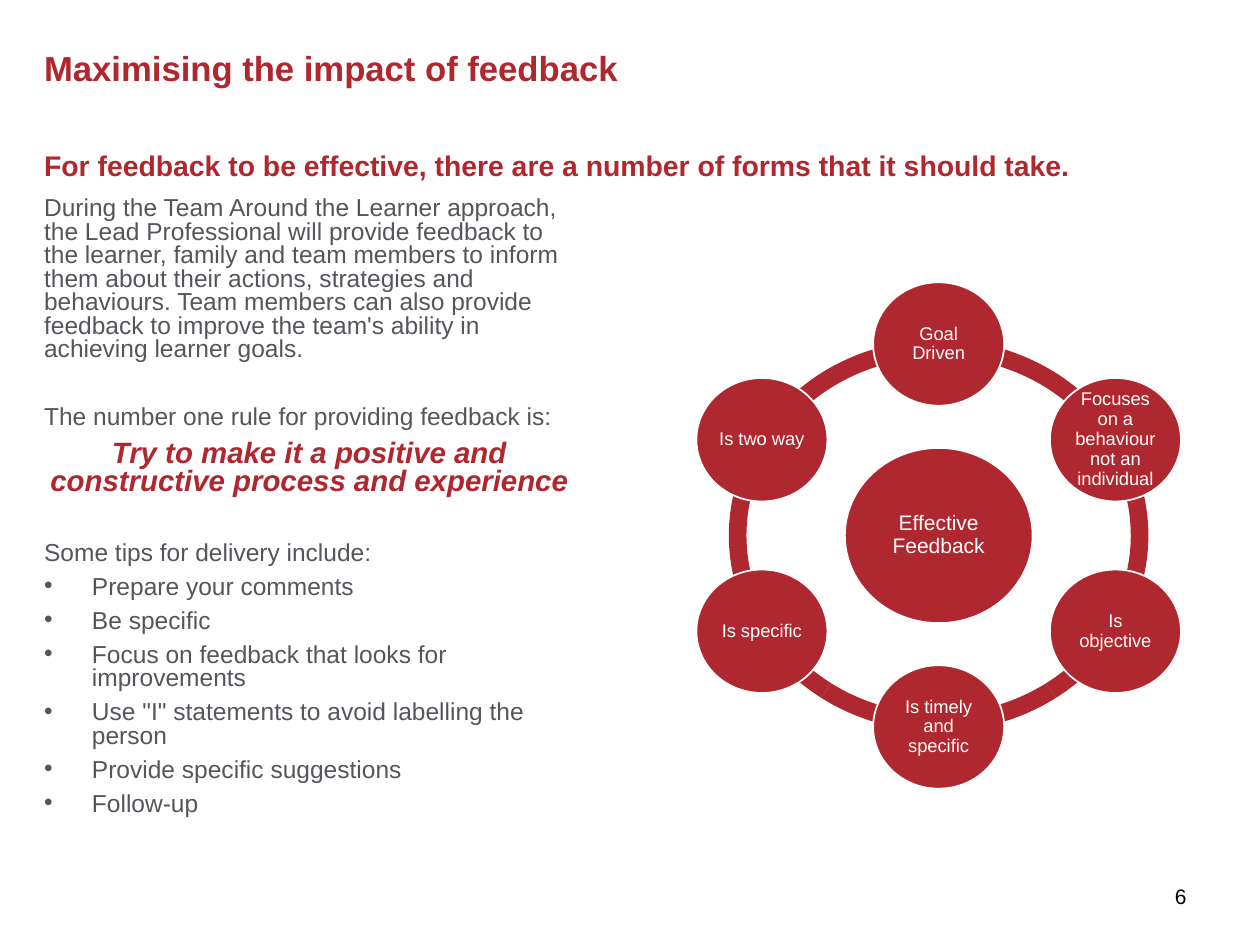
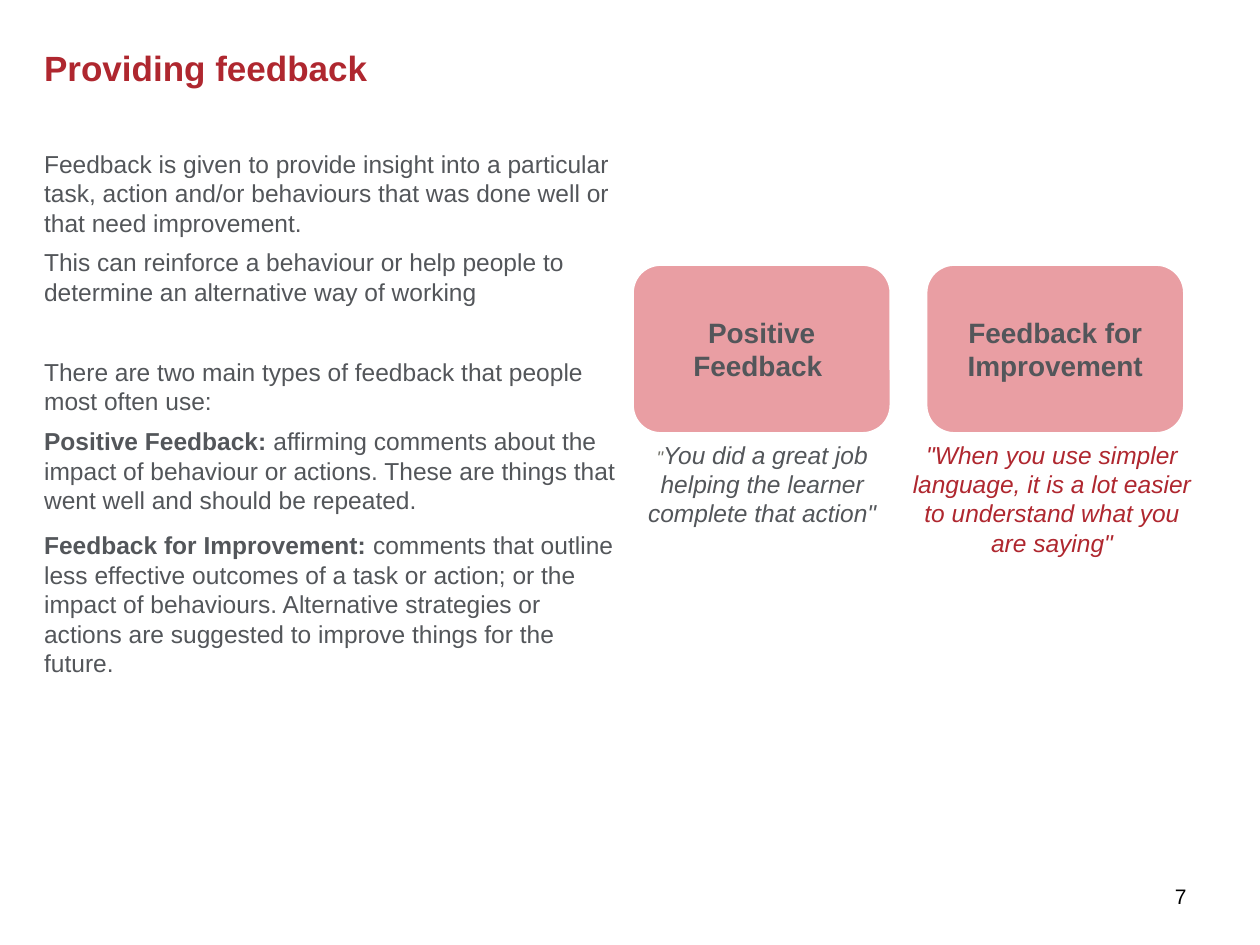
import math
from lxml import etree
from pptx import Presentation
from pptx import util as u
from pptx.dml.color import RGBColor
from pptx.enum import shapes, text
from pptx.oxml import ns

HUE = {"red": "AF272F", "pink": "E99EA3", "grey": "53565A",
       "ash": "707068", "white": "FFFFFF", "black": "000000"}
FONT = "Arial"
LEFT, MID = text.PP_ALIGN.LEFT, text.PP_ALIGN.CENTER
TOP, HALF = text.MSO_ANCHOR.TOP, text.MSO_ANCHOR.MIDDLE
KIND = shapes.MSO_SHAPE


def frame(shape, inset=None, anchor=TOP):
    """Return the wrapped, fixed-size text frame of a shape."""
    tf = shape.text_frame
    tf.word_wrap = True
    tf.auto_size = text.MSO_AUTO_SIZE.NONE
    tf.vertical_anchor = anchor
    if inset is not None:
        tf.margin_left = tf.margin_right = u.Inches(inset)
        tf.margin_top = tf.margin_bottom = u.Inches(inset)
    return tf


def say(tf, words, size=14, hue="grey", bold=False, slant=False,
        align=LEFT, line=1.0, before=0, after=0, bullet=False):
    """Add a paragraph; words is a string or a list of (string, run format)."""
    para = tf.paragraphs[0]
    if para.runs:
        para = tf.add_paragraph()
    props = para._p.get_or_add_pPr()
    hang = u.Inches(0.38) if bullet else 0
    props.set("marL", str(hang))
    props.set("indent", str(-hang))
    mark = etree.SubElement(props, ns.qn("a:buChar" if bullet else "a:buNone"))
    if bullet:
        mark.set("char", "•")
    para.alignment, para.line_spacing = align, line
    para.space_before, para.space_after = u.Pt(before), u.Pt(after)
    for part, own in [(words, {})] if isinstance(words, str) else words:
        run = para.add_run()
        run.text = part
        font = run.font
        font.name = FONT
        font.size = u.Pt(own.get("size", size))
        font.bold, font.italic = own.get("bold", bold), slant
        font.color.rgb = RGBColor.from_string(HUE[own.get("hue", hue)])


prs = Presentation()
prs.slide_width, prs.slide_height = u.Inches(10), u.Inches(7.5)

# Shared parts: title, body and page number
pages = [
    ("Maximising the impact of feedback", 19.8, 6, (0.35, 1.57, 4.21, 5.08)),
    ("Providing feedback", 20, 7, (0.35, 1.18, 4.59, 4.52)),
]
made = []
for name, size, num, box in pages:
    page = prs.slides.add_slide(prs.slide_layouts[1])
    spots = [(page.shapes.title, (0.35, 0.41, 9.25, 0.86)),
             (page.placeholders[1], box)]
    for spot, area in spots:
        spot.left, spot.top, spot.width, spot.height = map(u.Inches, area)
    head, body = [frame(spot, 0) for spot, area in spots]
    say(head, name, size=size, hue="red", bold=True, line=0.9)
    foot = page.shapes.add_textbox(*map(u.Inches, (9.13, 6.91, 0.48, 0.4)))
    say(frame(foot, anchor=HALF), str(num), size=12, hue="black", align=MID)
    made.append((page.shapes, head, body))

# Slide 1: subtitle and advice
art, head, body = made[0]
say(head, "For feedback to be effective, there are a number of forms that it should take.",
    size=16.2, hue="red", bold=True, line=0.9, before=36)
tight = dict(line=0.8, after=3)
say(body, "During the Team Around the Learner approach, the Lead Professional will "
    "provide feedback to the learner, family and team members to inform them about "
    "their actions, strategies and behaviours. Team members can also provide feedback "
    "to improve the team's ability in achieving learner goals.", **tight)
say(body, "The number one rule for providing feedback is:", before=22.5, **tight)
say(body, "Try to make it a positive and constructive process and experience",
    size=16.8, hue="red", bold=True, slant=True, align=MID, before=3, **tight)
say(body, "Some tips for delivery include:", before=22.5, **tight)
for tip in ["Prepare your comments", "Be specific",
            "Focus on feedback that looks for improvements",
            'Use "I" statements to avoid labelling the person',
            "Provide specific suggestions", "Follow-up"]:
    say(body, tip, bullet=True, before=3, **tight)

# Slide 1: ring of arcs
cx, cy = 7.45, 4.25
wide, high = 3.33, 3.11
for start, end in [(126, 162), (90, 126), (54, 90), (18, 54), (198, 18), (162, 198)]:
    arc = art.add_shape(KIND.BLOCK_ARC, u.Inches(cx - wide / 2), u.Inches(cy - high / 2),
                        u.Inches(wide), u.Inches(high))
    # Angles are stored in 60000ths of a degree, adjustments in 100000ths
    for i, value in enumerate([start * 0.6, end * 0.6, 0.045]):
        arc.adjustments[i] = value
    arc.shadow.inherit = False
    arc.fill.solid()
    arc.fill.fore_color.rgb = RGBColor.from_string(HUE["red"])
    arc.line.fill.background()

# Slide 1: hub, then six forms clockwise from the top
discs = [("Effective Feedback", cx, cy, 1.49, 1.39, 12)]
forms = ["Goal Driven", "Focuses on a behaviour not an individual", "Is objective",
         "Is timely and specific", "Is specific", "Is two way"]
for i, form in enumerate(forms):
    turn = math.radians(60 * i)
    discs.append((form, cx + 1.62 * math.sin(turn), cy - 1.52 * math.cos(turn),
                  1.04, 0.98, 10.5))
for label, x, y, w, h, size in discs:
    disc = art.add_shape(KIND.OVAL, u.Inches(x - w / 2), u.Inches(y - h / 2),
                         u.Inches(w), u.Inches(h))
    disc.shadow.inherit = False
    disc.fill.solid()
    disc.fill.fore_color.rgb = RGBColor.from_string(HUE["red"])
    disc.line.color.rgb = RGBColor.from_string(HUE["white"])
    disc.line.width = u.Pt(1)
    say(frame(disc, 0.02, HALF), label, size=size, hue="white", align=MID, line=0.9)

# Slide 2: explanation
art, head, body = made[1]
say(body, "Feedback is given to provide insight into a particular task, action and/or "
    "behaviours that was done well or that need improvement.", after=3)
say(body, "This can reinforce a behaviour or help people to determine an alternative "
    "way of working", before=3, after=3)
say(body, "There are two main types of feedback that people most often use:",
    before=26, after=3)
for term, sense in [
    ("Positive Feedback:", " affirming comments about the impact of behaviour or actions. "
     "These are things that went well and should be repeated."),
    ("Feedback for Improvement:", " comments that outline less effective outcomes of a "
     "task or action; or the impact of behaviours. Alternative strategies or actions are "
     "suggested to improve things for the future."),
]:
    say(body, [(term, {"bold": True}), (sense, {})], before=3, after=6)

# Slide 2: the two types, each with a sample quote below
types = [
    ("Positive Feedback ", 5.02, 4.94, 2.22, "grey",
     [('"', {"size": 10.5, "hue": "ash"}),
      ('You did a great job helping the learner complete that action"', {})]),
    ("Feedback for Improvement", 7.35, 7.13, 2.44, "red",
     '"When you use simpler language, it is a lot easier to understand '
     'what you are saying"'),
]
for label, x, left, w, hue, quote in types:
    card = art.add_shape(KIND.ROUNDED_RECTANGLE, *map(u.Inches, (x, 2.1, 2.05, 1.34)))
    card.shadow.inherit = False
    card.fill.solid()
    card.fill.fore_color.rgb = RGBColor.from_string(HUE["pink"])
    card.line.color.rgb = RGBColor.from_string(HUE["white"])
    card.line.width = u.Pt(1.5)
    say(frame(card, anchor=HALF), label, size=16, bold=True, align=MID)
    note = art.add_textbox(*map(u.Inches, (left, 3.44, w, 0.87)))
    say(frame(note), quote, hue=hue, slant=True, align=MID)

prs.save("out.pptx")
